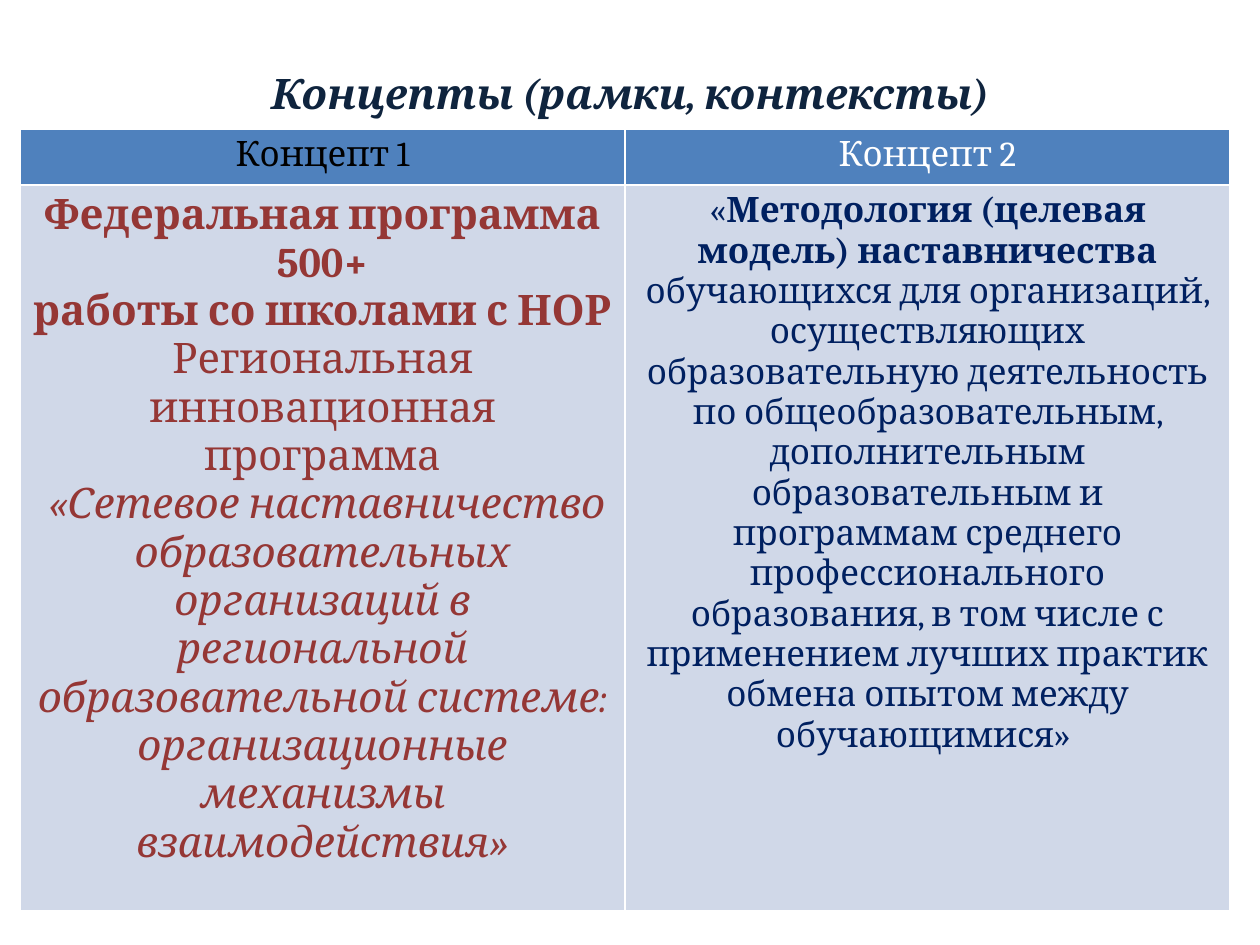
from pptx import Presentation
from pptx.dml.color import RGBColor
from pptx.enum.text import MSO_ANCHOR, PP_ALIGN
from pptx.oxml import parse_xml
from pptx.oxml.ns import nsdecls
from pptx.util import Emu, Pt

CENTER, MIDDLE = PP_ALIGN.CENTER, MSO_ANCHOR.MIDDLE
THEME = {
    "font": "Cambria", "big": 24, "small": 20,
    "title": "0F243E", "black": "000000", "white": "FFFFFF",
    "red": "953735", "navy": "002060", "head": "4F81BD", "body": "D0D8E8",
}


def px(num):
    return Emu(round(num * 914400 / 126))


def write(frame, paras, size, color):
    """Fill a text frame; each paragraph is a list of (text, bold, italic) runs."""
    for i, runs in enumerate(paras):
        para = frame.add_paragraph() if i else frame.paragraphs[0]
        para.alignment = CENTER
        for text, bold, italic in runs:
            run = para.add_run()
            run.text = text
            font = run.font
            font.name, font.size = THEME["font"], Pt(THEME[size])
            font.bold, font.italic = bold, italic
            font.color.rgb = RGBColor.from_string(THEME[color])


deck = Presentation()
deck.slide_width, deck.slide_height = px(1260), px(945)
slide = deck.slides.add_slide(deck.slide_layouts[6])

title = slide.shapes.add_textbox(px(63), px(38), px(1134), px(110)).text_frame
title.word_wrap = True
title.vertical_anchor = MIDDLE
write(title, [[("Концепты (рамки, контексты)", True, True)]], "big", "title")

program = [
    [("Федеральная программа 500+", True, False)],
    [("работы со школами с НОР", True, False)],
    [("Региональная инновационная программа", False, False)],
    [(" «Сетевое наставничество образовательных организаций в региональной "
      "образовательной системе: организационные механизмы взаимодействия»",
      False, True)],
]
method = [[
    ("«", False, False),
    ("Методология (целевая модель) наставничества ", True, False),
    ("обучающихся для организаций, осуществляющих образовательную "
     "деятельность по общеобразовательным, дополнительным образовательным и "
     "программам среднего профессионального образования, в том числе с "
     "применением лучших практик обмена опытом между обучающимися» ",
     False, False),
]]
rows = [
    ("head", 56, [([[("Концепт 1", False, False)]], "small", "black"),
                  ([[("Концепт 2", False, False)]], "small", "white")]),
    ("body", 726, [(program, "big", "red"), (method, "small", "navy")]),
]

table = slide.shapes.add_table(2, 2, px(20), px(129), px(1210), px(782)).table
for col in table.columns:
    col.width = px(605)
for r, (fill, height, cells) in enumerate(rows):
    table.rows[r].height = px(height)
    for c, (paras, size, color) in enumerate(cells):
        cell = table.cell(r, c)
        cell.fill.solid()
        cell.fill.fore_color.rgb = RGBColor.from_string(THEME[fill])
        write(cell.text_frame, paras, size, color)
        props = cell._tc.get_or_add_tcPr()
        for i, side in enumerate(("lnL", "lnR", "lnT", "lnB")):
            props.insert(i, parse_xml(
                f'<a:{side} {nsdecls("a")} w="{Pt(1)}"><a:solidFill>'
                f'<a:srgbClr val="{THEME["white"]}"/></a:solidFill></a:{side}>'))

deck.save("out.pptx")
